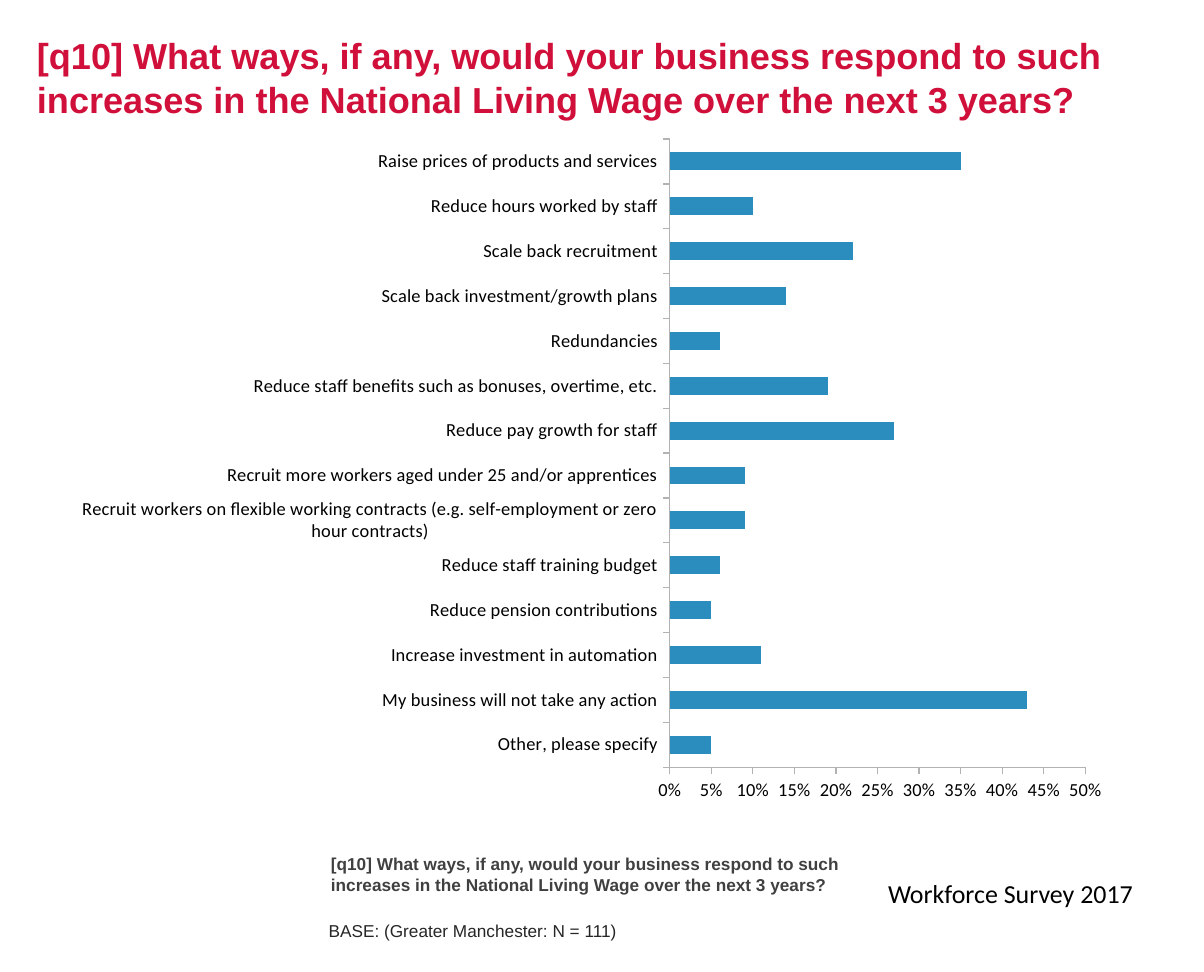
from lxml import etree
from pptx import Presentation
from pptx.chart.data import CategoryChartData as Data
from pptx.dml.color import RGBColor as Rgb
from pptx.enum.chart import XL_CHART_TYPE as Kind, XL_TICK_MARK as Tick
from pptx.enum.text import MSO_ANCHOR as Anchor
from pptx.oxml.ns import qn
from pptx.util import Pt

HUES = {"title": "D0103A", "bar": "2B8CBE", "axis": "B3B3B3",
        "text": "000000", "note": "404040", "base": "262626"}
ASK = ("[q10] What ways, if any, would your business respond to such "
       "increases in the National Living Wage over the next 3 years?")
REPLIES = [
    ("Other, please specify", 0.05),
    ("My business will not take any action", 0.43),
    ("Increase investment in automation", 0.11),
    ("Reduce pension contributions", 0.05),
    ("Reduce staff training budget", 0.06),
    ("Recruit workers on flexible working contracts "
     "(e.g. self-employment or zero hour contracts)", 0.09),
    ("Recruit more workers aged under 25 and/or apprentices", 0.09),
    ("Reduce pay growth for staff", 0.27),
    ("Reduce staff benefits such as bonuses, overtime, etc.", 0.19),
    ("Redundancies", 0.06),
    ("Scale back investment/growth plans", 0.14),
    ("Scale back recruitment", 0.22),
    ("Reduce hours worked by staff", 0.1),
    ("Raise prices of products and services", 0.35),
]
PLOT = {"layoutTarget": "inner", "xMode": "edge", "yMode": "edge",
        "x": 0.57, "y": 0.02, "w": 0.39, "h": 0.91}


def apply(item, **style):
    """Set each attribute of the item from its format values."""
    for name, value in style.items():
        setattr(item, name, value)


def add_text(slide, area, text, hue, anchor, **style):
    """Add a wrapped text box with one styled paragraph."""
    frame = slide.shapes.add_textbox(*map(Pt, area)).text_frame
    apply(frame, word_wrap=True, vertical_anchor=anchor)
    run = frame.paragraphs[0].add_run()
    run.text = text
    apply(run.font, **style)
    run.font.color.rgb = Rgb.from_string(HUES[hue])


def style_axis(axis):
    """Give an axis its line and outer ticks, without gridlines."""
    apply(axis, has_major_gridlines=False,
          major_tick_mark=Tick.OUTSIDE, minor_tick_mark=Tick.NONE)
    axis.format.line.width = Pt(0.75)
    axis.format.line.color.rgb = Rgb.from_string(HUES["axis"])


def place_plot(chart):
    """Fix the inner plot area as fractions of the chart."""
    area = chart._chartSpace.chart.plotArea
    for old in area.findall(qn("c:layout")):
        area.remove(old)
    layout = etree.Element(qn("c:layout"))
    manual = etree.SubElement(layout, qn("c:manualLayout"))
    for name, value in PLOT.items():
        etree.SubElement(manual, qn("c:" + name)).set("val", str(value))
    area.insert(0, layout)


def add_bars(slide, area):
    """Add the bar chart of replies."""
    data = Data(number_format="0%")
    names, shares = zip(*REPLIES)
    data.categories = names
    data.add_series("Series 1", shares)
    chart = slide.shapes.add_chart(
        Kind.BAR_CLUSTERED, *map(Pt, area), data).chart
    apply(chart, has_legend=False, has_title=False)
    apply(chart.font, name="Calibri", size=Pt(11))
    chart.font.color.rgb = Rgb.from_string(HUES["text"])
    style_axis(chart.category_axis)
    style_axis(chart.value_axis)
    apply(chart.value_axis, minimum_scale=0, maximum_scale=0.5, major_unit=0.05)
    apply(chart.value_axis.tick_labels, number_format="0%",
          number_format_is_linked=False)
    plot = chart.plots[0]
    apply(plot, gap_width=150, vary_by_categories=False)
    fill = plot.series[0].format.fill
    fill.solid()
    fill.fore_color.rgb = Rgb.from_string(HUES["bar"])
    place_plot(chart)


def main():
    """Build the survey slide and save it."""
    deck = Presentation()
    apply(deck, slide_width=Pt(720), slide_height=Pt(581))
    slide = deck.slides.add_slide(deck.slide_layouts[6])
    small = {"name": "Arial", "size": Pt(10.3)}
    add_text(slide, (15, 14.4, 685, 63.4), ASK, "title", Anchor.MIDDLE,
             name="Arial", size=Pt(21.6), bold=True)
    add_text(slide, (524, 521.3, 175, 26), "Workforce Survey 2017", "text",
             Anchor.TOP, name="Calibri", size=Pt(15.5))
    add_text(slide, (190.8, 512, 331, 26.6), ASK, "note", Anchor.BOTTOM,
             bold=True, **small)
    add_text(slide, (189.4, 538.6, 331, 27.4),
             "BASE: (Greater Manchester: N = 111)", "base", Anchor.BOTTOM, **small)
    add_bars(slide, (37.4, 74.9, 637.2, 412.6))
    deck.save("out.pptx")


if __name__ == "__main__":
    main()
